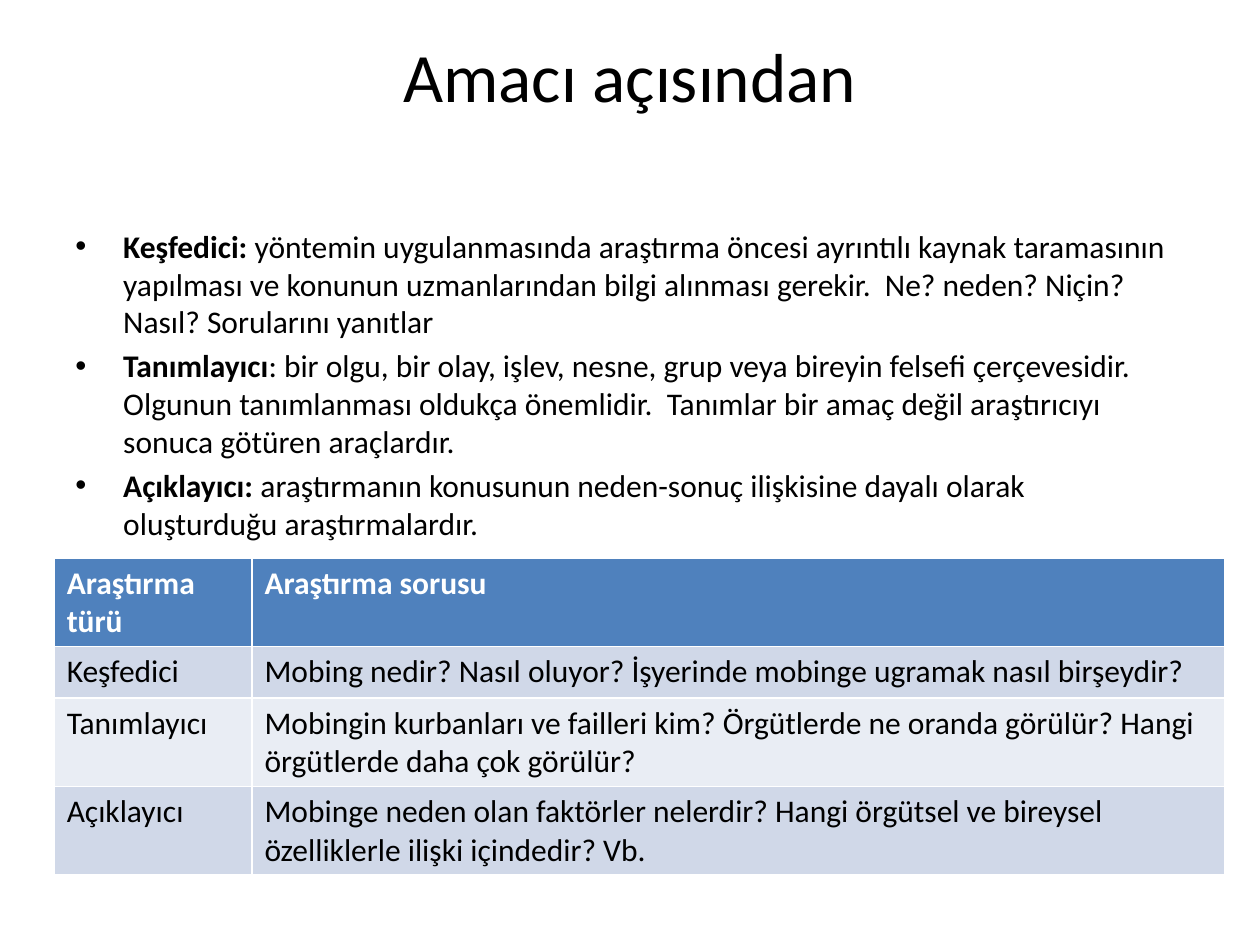
from lxml.etree import SubElement
from pptx import Presentation
from pptx.dml.color import RGBColor
from pptx.enum.text import MSO_ANCHOR as Anchor, PP_ALIGN as Align
from pptx.oxml.ns import qn
from pptx.util import Inches, Pt

BLACK = RGBColor(0x00, 0x00, 0x00)
WHITE = RGBColor(0xFF, 0xFF, 0xFF)
HEADER_BLUE = RGBColor(0x4F, 0x81, 0xBD)
BAND_DARK = RGBColor(0xD0, 0xD8, 0xE8)
BAND_LIGHT = RGBColor(0xE9, 0xED, 0xF4)

TITLE = "Amacı açısından"
DEFINITIONS = [
    ("Keşfedici: ",
     "yöntemin uygulanmasında araştırma öncesi ayrıntılı kaynak taramasının "
     "yapılması ve konunun uzmanlarından bilgi alınması gerekir.  Ne? neden? "
     "Niçin? Nasıl? Sorularını yanıtlar"),
    ("Tanımlayıcı",
     ": bir olgu, bir olay, işlev, nesne, grup veya bireyin felsefi "
     "çerçevesidir. Olgunun tanımlanması oldukça önemlidir.  Tanımlar bir amaç "
     "değil araştırıcıyı sonuca götüren araçlardır."),
    ("Açıklayıcı: ",
     "araştırmanın konusunun neden-sonuç ilişkisine dayalı olarak "
     "oluşturduğu araştırmalardır."),
]
QUESTIONS = [
    ("Araştırma türü", "Araştırma sorusu"),
    ("Keşfedici",
     "Mobing nedir? Nasıl oluyor? İşyerinde mobinge ugramak nasıl birşeydir?"),
    ("Tanımlayıcı",
     "Mobingin kurbanları ve failleri kim? Örgütlerde ne oranda görülür? "
     "Hangi örgütlerde daha çok görülür?"),
    ("Açıklayıcı",
     "Mobinge neden olan faktörler nelerdir? Hangi örgütsel ve bireysel "
     "özelliklerle ilişki içindedir? Vb."),
]
COLUMN_WIDTHS = [1.57, 7.72]
ROW_HEIGHTS = [0.7, 0.41, 0.7, 0.7]


def format_font(font, color=BLACK, **changes):
    values = {"name": "Calibri", "size": Pt(18), "bold": False, **changes}
    for name, value in values.items():
        setattr(font, name, value)
    font.color.rgb = color


def place(shape, left, top, width, height):
    values = {"left": left, "top": top, "width": width, "height": height}
    for name, value in values.items():
        setattr(shape, name, Inches(value))


def set_title(slide):
    title = slide.shapes.title
    place(title, 0.5, 0.26, 9, 1.29)
    frame = title.text_frame
    frame.text = TITLE
    frame.vertical_anchor = Anchor.TOP
    frame.margin_top = 0
    paragraph = frame.paragraphs[0]
    paragraph.alignment = Align.CENTER
    format_font(paragraph.runs[0].font, size=Pt(39.6))


def add_bullet(paragraph):
    properties = paragraph._p.get_or_add_pPr()
    properties.set("marL", str(Inches(0.38)))
    properties.set("indent", str(Inches(-0.38)))
    SubElement(properties, qn("a:buFont"), typeface="Arial")
    SubElement(properties, qn("a:buChar"), char="•")


def add_definitions(slide):
    box = slide.shapes.add_textbox(Inches(0.5), Inches(1.75), Inches(9), Inches(4.95))
    frame = box.text_frame
    frame.word_wrap = True
    for index, (term, definition) in enumerate(DEFINITIONS):
        paragraph = frame.add_paragraph() if index else frame.paragraphs[0]
        add_bullet(paragraph)
        paragraph.space_before = Pt(3.6 if index else 0)
        for text, bold in ((term, True), (definition, False)):
            run = paragraph.add_run()
            run.text = text
            format_font(run.font, bold=bold)


def fill_cell(cell, text, fill, color, bold):
    cell.fill.solid()
    cell.fill.fore_color.rgb = fill
    cell.text = text
    format_font(cell.text_frame.paragraphs[0].runs[0].font, color, bold=bold)


def add_question_table(slide):
    # The default table style supplies the white cell borders
    table = slide.shapes.add_table(
        len(QUESTIONS), len(COLUMN_WIDTHS), Inches(0.43), Inches(4.43),
        Inches(sum(COLUMN_WIDTHS)), Inches(sum(ROW_HEIGHTS))).table
    for column, width in zip(table.columns, COLUMN_WIDTHS):
        column.width = Inches(width)
    for index, (row, texts) in enumerate(zip(table.rows, QUESTIONS)):
        row.height = Inches(ROW_HEIGHTS[index])
        is_header = index == 0
        band = BAND_DARK if index % 2 else BAND_LIGHT
        for cell, text in zip(row.cells, texts):
            fill_cell(cell, text, HEADER_BLUE if is_header else band,
                      WHITE if is_header else BLACK, is_header)


def main():
    presentation = Presentation()
    presentation.slide_width = Inches(10)
    presentation.slide_height = Inches(7.5)
    slide = presentation.slides.add_slide(presentation.slide_layouts[5])

    # Heading, definitions and example questions
    set_title(slide)
    add_definitions(slide)
    add_question_table(slide)
    presentation.save("out.pptx")


if __name__ == "__main__":
    main()
